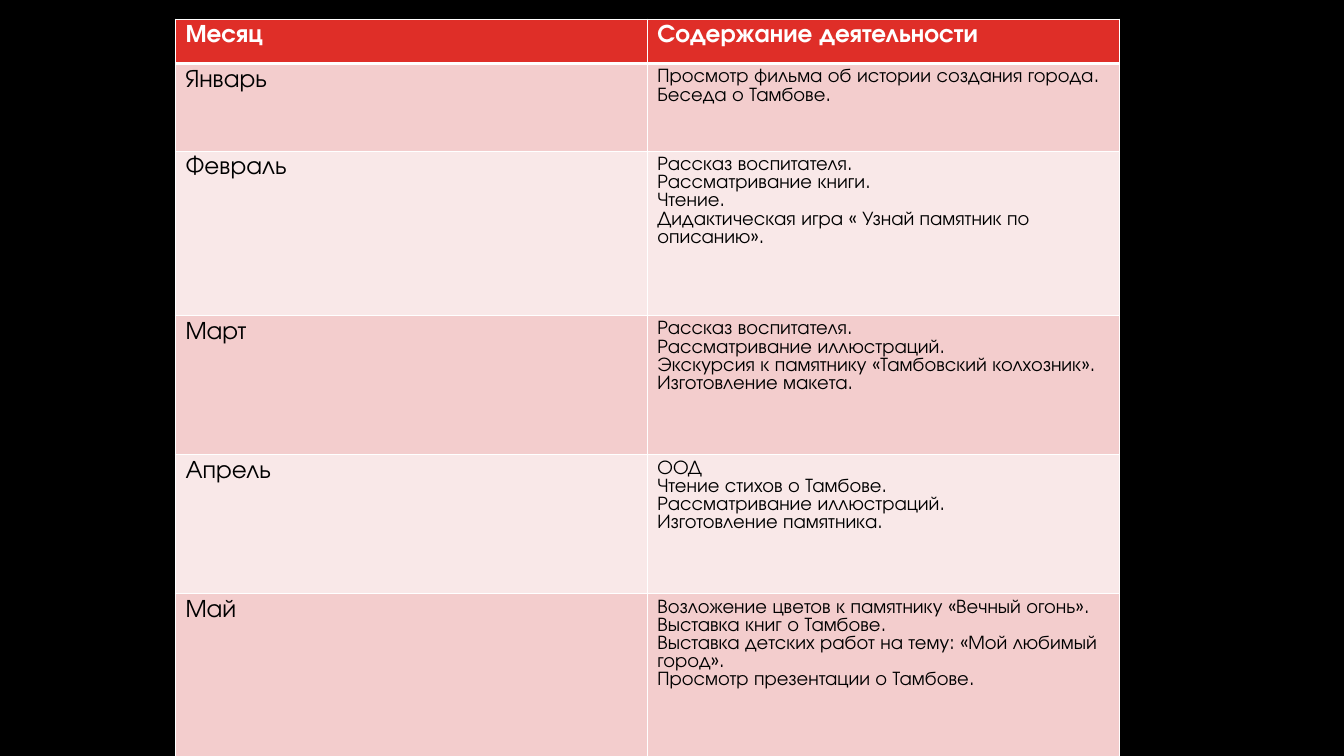
import pptx
import pptx.util
import pptx.dml.color
from lxml import etree

HEADINGS = ("Месяц", "Содержание деятельности")
MONTHS = [
    ("Январь", 0.87, [
        "Просмотр фильма об истории создания города.",
        "Беседа о Тамбове."]),
    ("Февраль", 1.63, [
        "Рассказ воспитателя.",
        "Рассматривание книги.",
        "Чтение.",
        "Дидактическая игра « Узнай памятник по описанию»."]),
    ("Март", 1.38, [
        "Рассказ воспитателя.",
        "Рассматривание иллюстраций.",
        "Экскурсия к памятнику «Тамбовский колхозник».",
        "Изготовление макета."]),
    ("Апрель", 1.38, [
        "ООД",
        "Чтение стихов о Тамбове.",
        "Рассматривание иллюстраций.",
        "Изготовление памятника."]),
    ("Май", 1.63, [
        "Возложение цветов к памятнику «Вечный огонь».",
        "Выставка книг о Тамбове.",
        "Выставка детских работ на тему: «Мой любимый город».",
        "Просмотр презентации о Тамбове."]),
]
FONT = "TeX Gyre Adventor"
BLACK, WHITE, RED = "000000", "FFFFFF", "DF2E28"
BANDS = ("F3CDCD", "F9E8E8")
HEADER_HEIGHT = 0.44
COLUMN_WIDTH = 4.68
LEFT, TOP = 1.74, 0.19


def paint(fill, color):
    fill.solid()
    fill.fore_color.rgb = pptx.dml.color.RGBColor.from_string(color)


def write(cell, lines, size=18, color=BLACK, bold=False):
    frame = cell.text_frame
    for index, line in enumerate(lines):
        paragraph = frame.add_paragraph() if index else frame.paragraphs[0]
        run = paragraph.add_run()
        run.text = line
        run.font.name = FONT
        run.font.size = pptx.util.Pt(size)
        run.font.bold = bold
        paint(run.font.fill, color)


def finish(cell, color, bottom=1):
    properties = cell._tc.get_or_add_tcPr()
    for side, width in (("L", 1), ("R", 1), ("T", 1), ("B", bottom)):
        border = etree.SubElement(properties, pptx.oxml.ns.qn("a:ln" + side),
                                  w=str(pptx.util.Pt(width)))
        solid = etree.SubElement(border, pptx.oxml.ns.qn("a:solidFill"))
        etree.SubElement(solid, pptx.oxml.ns.qn("a:srgbClr"), val=WHITE)
    paint(cell.fill, color)


deck = pptx.Presentation()
deck.slide_width = pptx.util.Inches(13.33)
deck.slide_height = pptx.util.Inches(7.5)
slide = deck.slides.add_slide(deck.slide_layouts[6])
paint(slide.background.fill, BLACK)

heights = [HEADER_HEIGHT] + [height for _, height, _ in MONTHS]
plan = slide.shapes.add_table(
    len(heights), len(HEADINGS), pptx.util.Inches(LEFT), pptx.util.Inches(TOP),
    pptx.util.Inches(COLUMN_WIDTH * len(HEADINGS)),
    pptx.util.Inches(sum(heights))).table
for column in plan.columns:
    column.width = pptx.util.Inches(COLUMN_WIDTH)
for row, height in zip(plan.rows, heights):
    row.height = pptx.util.Inches(height)

for column, heading in enumerate(HEADINGS):
    write(plan.cell(0, column), [heading], color=WHITE, bold=True)
    finish(plan.cell(0, column), RED, bottom=3)
for index, (month, _, activities) in enumerate(MONTHS):
    month_cell, activity_cell = plan.cell(index + 1, 0), plan.cell(index + 1, 1)
    write(month_cell, [month])
    write(activity_cell, activities, size=14)
    for cell in (month_cell, activity_cell):
        finish(cell, BANDS[index % 2])

deck.save("out.pptx")
